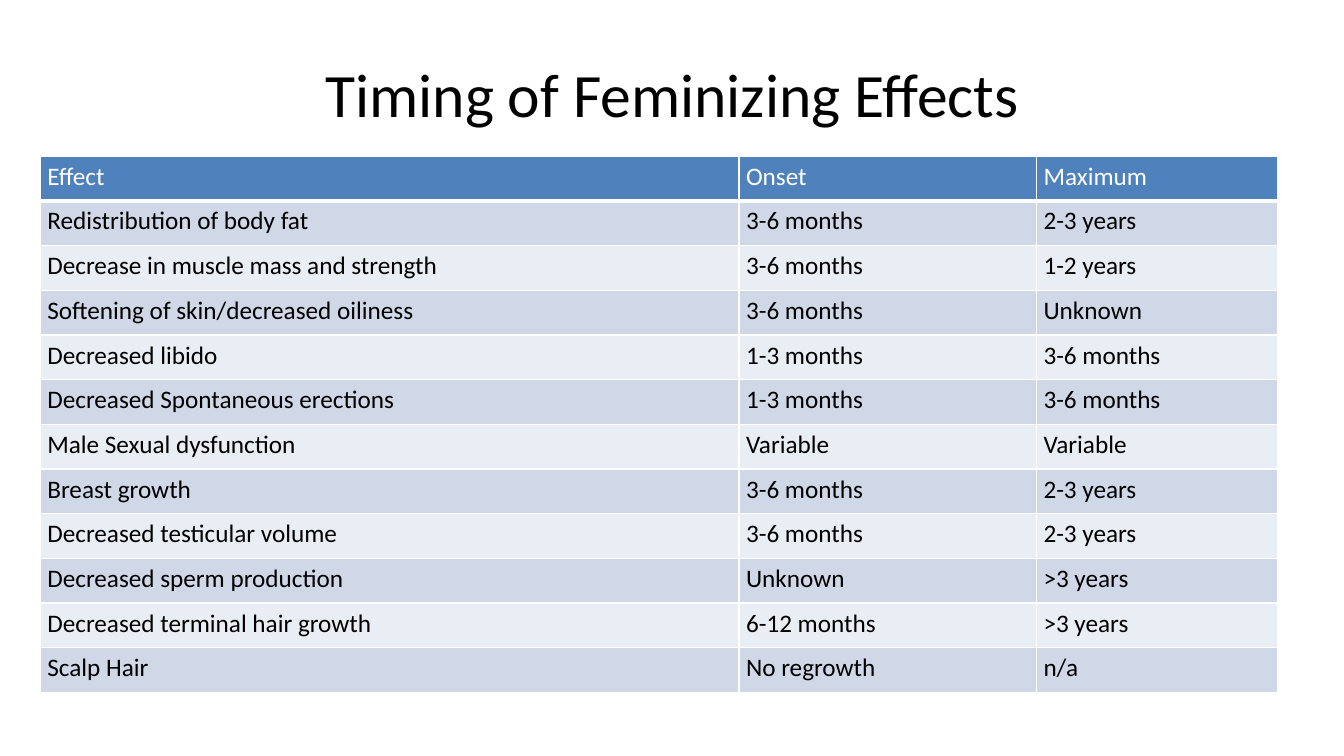
from dataclasses import dataclass

from lxml import etree
from pptx import Presentation
from pptx.dml.color import RGBColor
from pptx.enum.text import MSO_ANCHOR, PP_ALIGN
from pptx.oxml.ns import qn
from pptx.util import Inches, Pt

CENTER = PP_ALIGN.CENTER
MIDDLE = MSO_ANCHOR.MIDDLE
TITLE_ONLY = 5


@dataclass(frozen=True)
class Theme:
    font: str = "Calibri"
    title_size: int = 44
    table_size: int = 18
    text: str = "000000"
    header_text: str = "FFFFFF"
    header_fill: str = "4F81BD"
    bands: tuple = ("E9EDF4", "D0D8E8")
    border: str = "FFFFFF"
    border_width: int = 1
    header_rule_width: int = 3


THEME = Theme()
COLUMN_WIDTHS = (6.93, 2.95, 2.39)
TABLE_HEIGHT = 5.32
ROWS = (
    ("Effect", "Onset", "Maximum"),
    ("Redistribution of body fat", "3-6 months", "2-3 years"),
    ("Decrease in muscle mass and strength", "3-6 months", "1-2 years"),
    ("Softening of skin/decreased oiliness", "3-6 months", "Unknown"),
    ("Decreased libido", "1-3 months", "3-6 months"),
    ("Decreased Spontaneous erections", "1-3 months", "3-6 months"),
    ("Male Sexual dysfunction", "Variable", "Variable"),
    ("Breast growth", "3-6 months", "2-3 years"),
    ("Decreased testicular volume", "3-6 months", "2-3 years"),
    ("Decreased sperm production", "Unknown", ">3 years"),
    ("Decreased terminal hair growth", "6-12 months", ">3 years"),
    ("Scalp Hair", "No regrowth", "n/a"),
)


def format_font(font, size, color):
    font.name = THEME.font
    font.size = Pt(size)
    font.bold = False
    font.color.rgb = RGBColor.from_string(color)


def add_title(s, text):
    title = s.shapes.title
    title.left, title.top = Inches(0.67), Inches(0.3)
    title.width, title.height = Inches(12), Inches(1.25)
    tf = title.text_frame
    tf.text = text
    tf.vertical_anchor = MIDDLE
    p = tf.paragraphs[0]
    p.alignment = CENTER
    format_font(p.runs[0].font, THEME.title_size, THEME.text)


def set_borders(cell, top, bottom):
    """Draw the four cell borders; must run before the cell fill is set."""
    tc_pr = cell._tc.get_or_add_tcPr()
    side = THEME.border_width
    for tag, width in (("lnL", side), ("lnR", side), ("lnT", top), ("lnB", bottom)):
        ln = etree.SubElement(tc_pr, qn(f"a:{tag}"), w=str(Pt(width)))
        fill = etree.SubElement(ln, qn("a:solidFill"))
        etree.SubElement(fill, qn("a:srgbClr"), val=THEME.border)


def format_cell(cell, text, row):
    is_header = row == 0
    cell.text = text
    cell.margin_left = cell.margin_right = Inches(0.07)
    cell.margin_top = cell.margin_bottom = Inches(0.05)
    set_borders(
        cell,
        top=THEME.header_rule_width if row == 1 else THEME.border_width,
        bottom=THEME.header_rule_width if is_header else THEME.border_width,
    )
    cell.fill.solid()
    fill = THEME.header_fill if is_header else THEME.bands[row % 2]
    cell.fill.fore_color.rgb = RGBColor.from_string(fill)
    color = THEME.header_text if is_header else THEME.text
    format_font(cell.text_frame.paragraphs[0].runs[0].font, THEME.table_size, color)


def add_effects_table(s):
    table = s.shapes.add_table(
        len(ROWS), len(COLUMN_WIDTHS), Inches(0.4), Inches(1.55),
        Inches(sum(COLUMN_WIDTHS)), Inches(TABLE_HEIGHT),
    ).table
    for column, width in zip(table.columns, COLUMN_WIDTHS):
        column.width = Inches(width)
    for i, values in enumerate(ROWS):
        for j, text in enumerate(values):
            format_cell(table.cell(i, j), text, i)


def main():
    prs = Presentation()
    prs.slide_width, prs.slide_height = Inches(13.33), Inches(7.5)
    s = prs.slides.add_slide(prs.slide_layouts[TITLE_ONLY])
    add_title(s, "Timing of Feminizing Effects")
    add_effects_table(s)
    prs.save("out.pptx")


if __name__ == "__main__":
    main()
